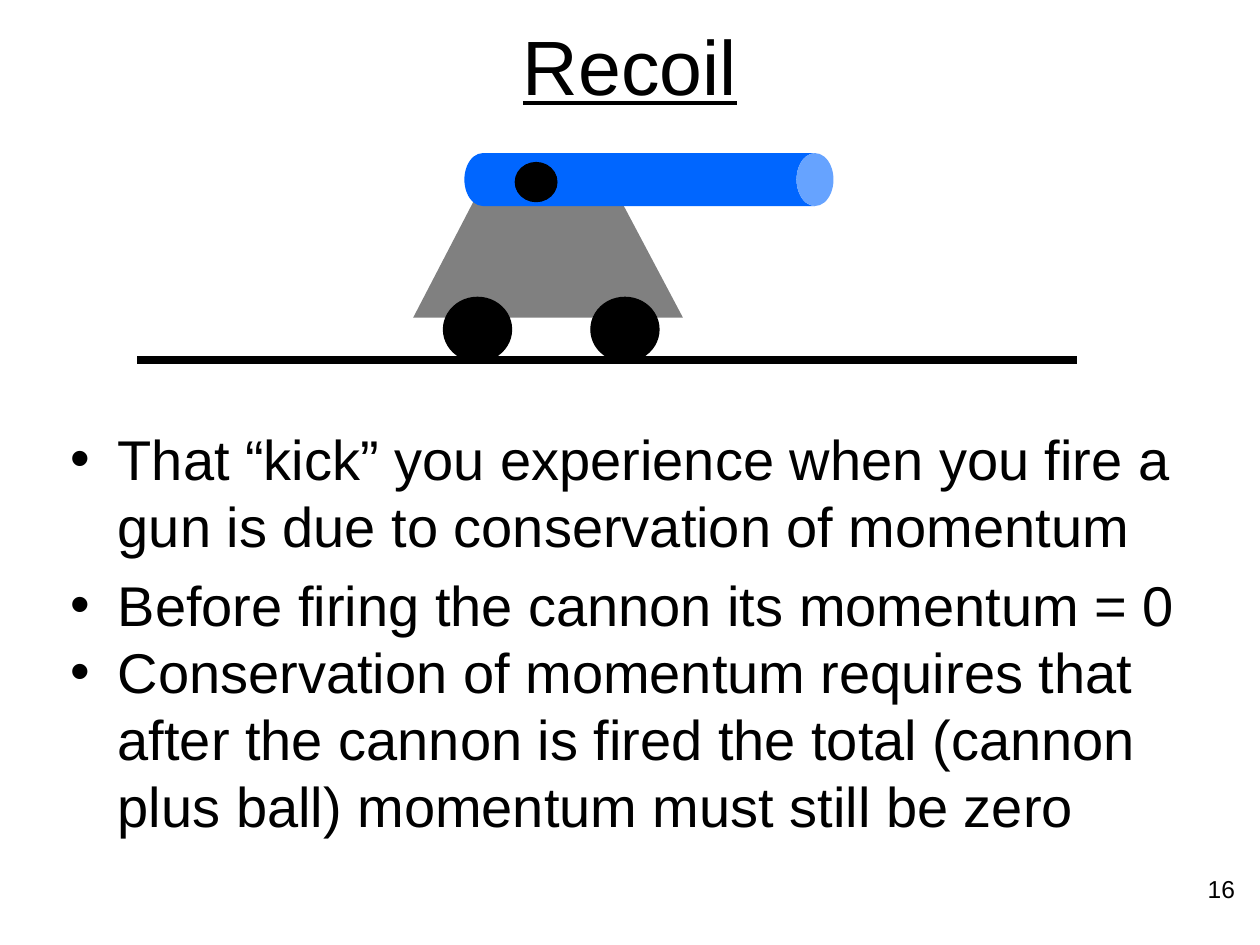
from pptx import Presentation
from pptx.dml.color import RGBColor
from pptx.enum.shapes import MSO_CONNECTOR, MSO_SHAPE
from pptx.enum.text import MSO_AUTO_SIZE, PP_ALIGN
from pptx.oxml.ns import qn
from pptx.util import Inches, Pt
from lxml.etree import SubElement

BLACK = RGBColor(0x00, 0x00, 0x00)
GRAY = RGBColor(0x80, 0x80, 0x80)
BLUE = RGBColor(0x00, 0x66, 0xFF)

TITLE = "Recoil"
BULLETS = [
    "That “kick” you experience when you fire a gun is due to conservation of momentum",
    "Before firing the cannon its momentum = 0",
    "Conservation of momentum requires that after the cannon is fired "
    "the total (cannon plus ball) momentum must still be zero",
]
PAGE_NUMBER = "16"

TITLE_BOX = (0, 0, 10, 1.02)
BODY_BOX = (0.46, 3.32, 9, 3.54)
NUMBER_BOX = (7.57, 6.89, 2.33, 0.52)
CARRIAGE = [(5.42, 2.52), (4.88, 1.5), (3.81, 1.5), (3.28, 2.52)]
WHEELS = [(4.69, 2.36, 0.54, 0.51), (3.52, 2.36, 0.54, 0.51)]
BARREL = (4.94, -0.04, 0.42, 2.93)
BALL = (4.09, 1.29, 0.33, 0.31)
GROUND = (1.09, 2.86, 8.55, 2.86)

TITLE_FORMAT = {"name": "Arial", "size": Pt(44), "underline": True}
BODY_FORMAT = {"name": "Arial", "size": Pt(32)}
NUMBER_FORMAT = {"name": "Arial", "size": Pt(14)}


def inches(values):
    return [Inches(value) for value in values]


def place(shape, box):
    for name, value in zip(("left", "top", "width", "height"), inches(box)):
        setattr(shape, name, value)


def write(paragraph, text, font_format):
    run = paragraph.add_run()
    run.text = text
    for name, value in font_format.items():
        setattr(run.font, name, value)
    run.font.color.rgb = BLACK


def paint(shape, color, outlined=False):
    shape.shadow.inherit = False
    shape.fill.solid()
    shape.fill.fore_color.rgb = color
    if outlined:
        shape.line.color.rgb = color
        shape.line.width = Pt(0.75)
    else:
        shape.line.fill.background()


def add_text(slide):
    title, body = slide.placeholders
    place(title, TITLE_BOX)
    title_paragraph = title.text_frame.paragraphs[0]
    title_paragraph.alignment = PP_ALIGN.CENTER
    write(title_paragraph, TITLE, TITLE_FORMAT)

    place(body, BODY_BOX)
    frame = body.text_frame
    frame.auto_size = MSO_AUTO_SIZE.NONE
    for index, text in enumerate(BULLETS):
        paragraph = frame.add_paragraph() if index else frame.paragraphs[0]
        write(paragraph, text, BODY_FORMAT)
    frame.paragraphs[-1].space_before = Pt(0)

    number = slide.shapes.add_textbox(*inches(NUMBER_BOX))
    number.text_frame.word_wrap = True
    number_paragraph = number.text_frame.paragraphs[0]
    number_paragraph.alignment = PP_ALIGN.RIGHT
    write(number_paragraph, PAGE_NUMBER, NUMBER_FORMAT)


def add_cannon(slide):
    cannon = slide.shapes.add_group_shape().shapes
    start, *corners = [inches(point) for point in CARRIAGE]
    builder = cannon.build_freeform(*start)
    builder.add_line_segments(corners, close=True)
    paint(builder.convert_to_shape(), GRAY)

    for box in WHEELS:
        paint(cannon.add_shape(MSO_SHAPE.OVAL, *inches(box)), BLACK, outlined=True)

    barrel = cannon.add_shape(MSO_SHAPE.CAN, *inches(BARREL))
    barrel.rotation = 90
    barrel.adjustments[0] = 0.7
    paint(barrel, BLUE)

    paint(cannon.add_shape(MSO_SHAPE.OVAL, *inches(BALL)), BLACK, outlined=True)


def add_ground(slide):
    ground = slide.shapes.add_connector(MSO_CONNECTOR.STRAIGHT, *inches(GROUND))
    ground.line.color.rgb = BLACK
    ground.line.width = Pt(4.5)
    SubElement(ground._element.spPr, qn("a:effectLst"))


def main():
    presentation = Presentation()
    presentation.slide_width = Inches(10)
    presentation.slide_height = Inches(7.5)
    slide = presentation.slides.add_slide(presentation.slide_layouts[1])
    add_text(slide)
    add_cannon(slide)
    add_ground(slide)
    presentation.save("out.pptx")


if __name__ == "__main__":
    main()
